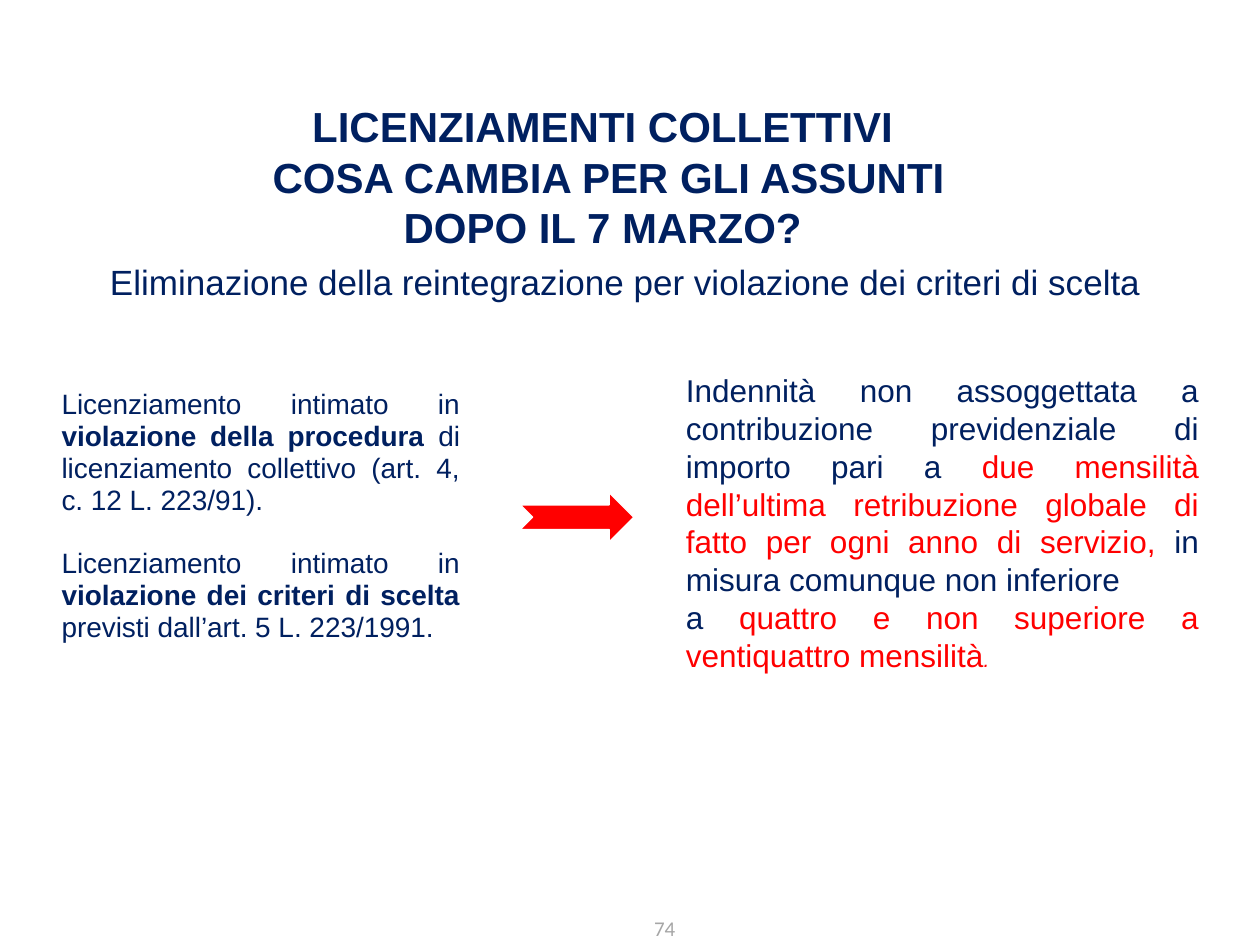
"""Build the slide on collective dismissals after 7 March."""
from pptx import Presentation, util as u
from pptx.dml.color import RGBColor
from pptx.enum import shapes, text

NAVY, RED, GREY, WHITE = "002060", "FF0000", "A6A6A6", "FFFFFF"
BOLD = {"bold": True}
IN_RED = {"color": RED}

TITLE = [
    [("LICENZIAMENTI COLLETTIVI ", BOLD)],
    [("COSA CAMBIA PER GLI ASSUNTI DOPO IL 7 MARZO? ", BOLD)],
]
SUBTITLE = [[("Eliminazione della reintegrazione per violazione dei criteri di scelta", {})]]
CASES = [
    [("Licenziamento intimato in ", {}),
     ("violazione della procedura ", BOLD),
     ("di licenziamento collettivo (art. 4, c. 12 L. 223/91). ", {})],
    [("Licenziamento intimato in ", {}),
     ("violazione dei criteri di scelta ", BOLD),
     ("previsti dall’art. 5 L. 223/1991.", {})],
]
INDEMNITY = [
    [("Indennità non assoggettata a contribuzione previdenziale di importo pari a ", {}),
     ("due mensilità dell’ultima retribuzione globale di fatto per ogni anno di servizio, ", IN_RED),
     ("in misura comunque non inferiore", {})],
    [("a ", {}),
     ("quattro e non superiore a ventiquattro mensilità", IN_RED),
     (". ", {"color": RED, "size": 12, "italic": True})],
]
PAGE = [[("74", {})]]


def rgb(value):
    return RGBColor.from_string(value)


def add_run(p, content, size=18, color=NAVY, font="Arial", bold=False, italic=False):
    r = p.add_run()
    r.text = content
    f = r.font
    f.size, f.name, f.bold, f.italic = u.Pt(size), font, bold, italic
    f.color.rgb = rgb(color)


def write(sp, paragraphs, align=text.PP_ALIGN.CENTER, anchor=text.MSO_ANCHOR.TOP,
          insets=(0.1, 0.05, 0.1, 0.05), spacing=1.0, gap=0, wrap=True, **base):
    tf = sp.text_frame
    tf.word_wrap, tf.auto_size, tf.vertical_anchor = wrap, text.MSO_AUTO_SIZE.NONE, anchor
    tf.margin_left, tf.margin_top, tf.margin_right, tf.margin_bottom = map(u.Inches, insets)
    for i, runs in enumerate(paragraphs):
        p = tf.add_paragraph() if i else tf.paragraphs[0]
        p.alignment, p.line_spacing = align, spacing
        p.space_before, p.space_after = u.Pt(gap if i else 0), u.Pt(0)
        for content, fmt in runs:
            add_run(p, content, **{**base, **fmt})


def add_label(s, box, paragraphs, **fmt):
    write(s.shapes.add_textbox(*map(u.Inches, box)), paragraphs, **fmt)


def add_preset(s, kind, box, adjustment):
    sp = s.shapes.add_shape(kind, *map(u.Inches, box))
    sp.shadow.inherit = False
    sp.adjustments[len(sp.adjustments) - 1] = adjustment
    return sp


def add_panel(s, box, paragraphs, top=0.1, **fmt):
    sp = add_preset(s, shapes.MSO_SHAPE.ROUNDED_RECTANGLE, box, 0.04)
    sp.fill.background()
    sp.line.fill.background()
    write(sp, paragraphs, align=text.PP_ALIGN.JUSTIFY, insets=(0.1, top, 0.1, 0.05), **fmt)


def add_arrow(s, box):
    sp = add_preset(s, shapes.MSO_SHAPE.NOTCHED_RIGHT_ARROW, box, 0.5)
    sp.fill.solid()
    sp.fill.fore_color.rgb = rgb(RED)
    sp.line.color.rgb = rgb(WHITE)
    sp.line.width = u.Pt(0.75)


def main():
    prs = Presentation()
    prs.slide_width, prs.slide_height = u.Inches(10), u.Inches(7.5)
    s = prs.slides.add_slide(prs.slide_layouts[5])

    title = s.shapes.title
    title.left, title.top, title.width, title.height = map(u.Inches, (1.75, 0.75, 6.16, 1.3))
    write(title, TITLE, anchor=text.MSO_ANCHOR.MIDDLE, insets=(0.09, 0.04, 0.09, 0.04), size=24)
    add_panel(s, (0.35, 2.18, 3.44, 4.25), CASES, top=0.87, spacing=0.95, gap=18, size=16)
    add_arrow(s, (4.13, 3.91, 0.9, 0.39))
    add_panel(s, (5.31, 2.81, 4.34, 3.07), INDEMNITY)
    add_label(s, (0.75, 2.02, 8.43, 0.44), SUBTITLE, size=20)
    add_label(s, (5.19, 7.27, 0.17, 0.2), PAGE, anchor=text.MSO_ANCHOR.MIDDLE,
              insets=(0, 0, 0, 0), wrap=False, size=12, color=GREY, font="Calibri")

    prs.save("out.pptx")


if __name__ == "__main__":
    main()
